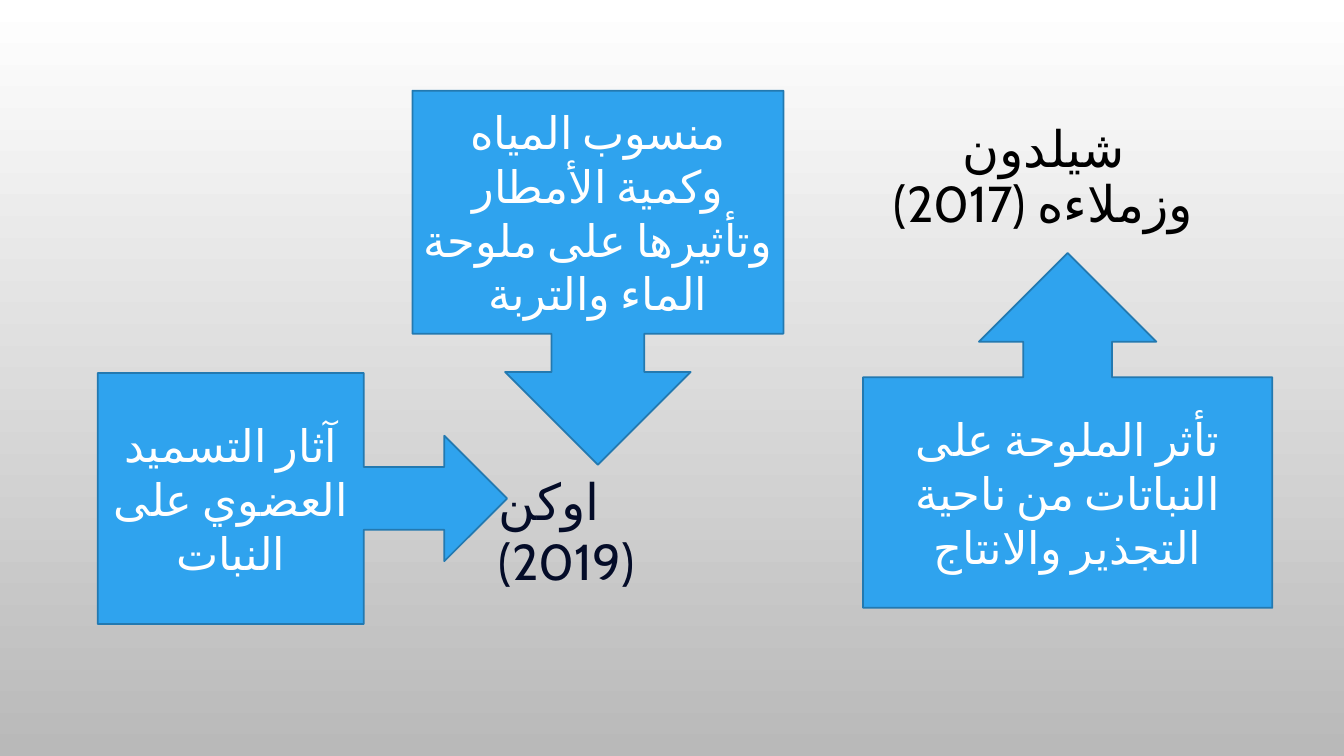
from lxml.etree import SubElement
from pptx import Presentation
from pptx.dml.color import RGBColor
from pptx.enum.lang import MSO_LANGUAGE_ID
from pptx.enum.shapes import MSO_SHAPE
from pptx.enum.text import MSO_ANCHOR, MSO_AUTO_SIZE, PP_ALIGN
from pptx.oxml.ns import qn
from pptx.util import Inches, Pt

FONT = "Cabin"
WHITE = RGBColor(0xFF, 0xFF, 0xFF)
GRAY = RGBColor(0xB9, 0xB9, 0xB9)
BLACK = RGBColor(0, 0, 0)
NAVY = RGBColor(0x04, 0x0C, 0x28)
BLUE = RGBColor(0x2F, 0xA3, 0xEE)
DARK_BLUE = RGBColor(0x23, 0x79, 0xB0)

TITLE = ("شيلدون وزملاءه (2017) ", (8.75, 0.9, 3.2, 1.75))
STUDY = ("اوكن (2019)", (4.85, 4.61, 2.46, 0.71))
CALLOUTS = [
    (MSO_SHAPE.UP_ARROW_CALLOUT, "تأثر الملوحة على النباتات من ناحية التجذير والانتاج",
     (8.56, 2.51, 4.06, 3.52)),
    (MSO_SHAPE.DOWN_ARROW_CALLOUT, "منسوب المياه وكمية الأمطار وتأثيرها على ملوحة الماء والتربة",
     (4.09, 0.9, 3.68, 3.71)),
    (MSO_SHAPE.RIGHT_ARROW_CALLOUT, "آثار التسميد العضوي على النبات",
     (0.97, 3.7, 4.06, 2.49)),
]


def write(shape, text, size, color, alignment, anchor):
    frame = shape.text_frame
    frame.text = text
    frame.word_wrap = True
    frame.auto_size = MSO_AUTO_SIZE.NONE
    frame.vertical_anchor = anchor
    paragraph = frame.paragraphs[0]
    paragraph.alignment = alignment
    run = paragraph.runs[0]
    font = run.font
    font.name = FONT
    font.size = Pt(size)
    font.color.rgb = color
    font.language_id = MSO_LANGUAGE_ID.ARABIC
    # Arabic letters take the complex-script typeface
    SubElement(run._r.get_or_add_rPr(), qn("a:cs"), typeface=FONT)
    return paragraph


presentation = Presentation()
presentation.slide_width = Inches(13.33)
presentation.slide_height = Inches(7.5)
slide = presentation.slides.add_slide(presentation.slide_layouts[5])

background = slide.background.fill
background.gradient()
background.gradient_angle = 270
for stop, position, color in zip(background.gradient_stops, (0, 1), (WHITE, GRAY)):
    stop.position = position
    stop.color.rgb = color

title_text, title_box = TITLE
title = slide.shapes.title
title.left, title.top, title.width, title.height = map(Inches, title_box)
title_paragraph = write(title, title_text, 36, BLACK, PP_ALIGN.CENTER, MSO_ANCHOR.MIDDLE)
title_paragraph.line_spacing = 0.9

study_text, study_box = STUDY
study = slide.shapes.add_textbox(*map(Inches, study_box))
write(study, study_text, 36, NAVY, PP_ALIGN.LEFT, MSO_ANCHOR.TOP)

for kind, text, box in CALLOUTS:
    callout = slide.shapes.add_shape(kind, *map(Inches, box))
    callout.shadow.inherit = False
    callout.fill.solid()
    callout.fill.fore_color.rgb = BLUE
    callout.line.color.rgb = DARK_BLUE
    callout.line.width = Pt(1.25)
    write(callout, text, 32, WHITE, PP_ALIGN.CENTER, MSO_ANCHOR.MIDDLE)

presentation.save("out.pptx")
